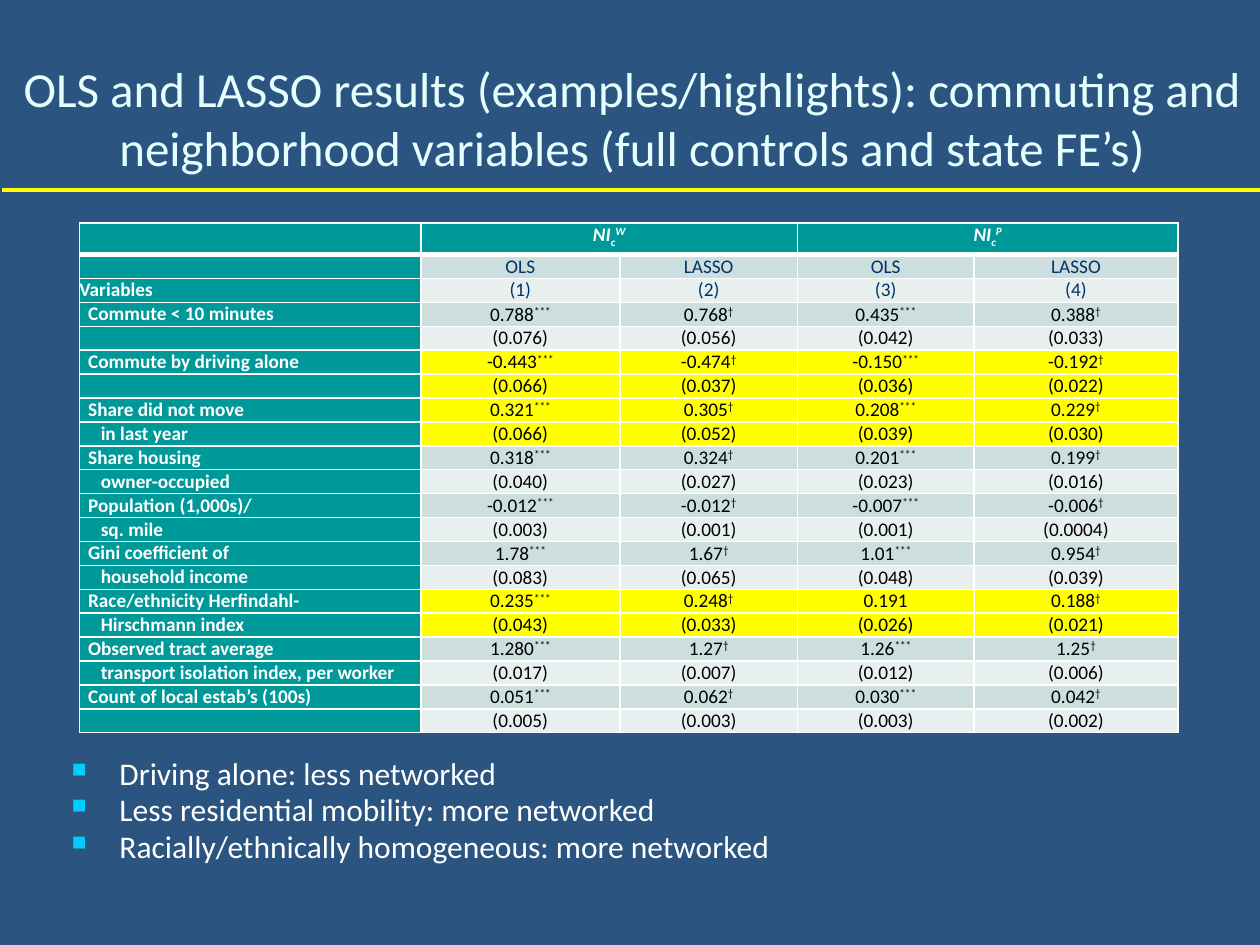
from lxml.etree import SubElement as Sub
from pptx import Presentation
from pptx.dml.color import RGBColor as RGB
from pptx.enum.shapes import MSO_CONNECTOR as Conn
from pptx.enum.text import MSO_ANCHOR as Anchor, PP_ALIGN as Align
from pptx.oxml.ns import qn
from pptx.util import Inches, Pt

NAVY = RGB(0x2B, 0x54, 0x81)
ICE = RGB(0xE5, 0xFF, 0xFF)
WHITE = RGB(0xFF, 0xFF, 0xFF)
BLACK = RGB(0, 0, 0)
INK = RGB(0, 0x33, 0x66)
TEAL = RGB(0, 0x99, 0x99)
YELLOW = RGB(0xFF, 0xFF, 0)
CYAN = RGB(0, 0xCC, 0xFF)
BANDS = RGB(0xE7, 0xEF, 0xEF), RGB(0xCC, 0xDE, 0xDE)

# Two label lines, then coefficients, their marks, standard errors
STARS = ("***", "†", "***", "†")
PAIRS = [
    ("Commute < 10 minutes", "", "0.788 0.768 0.435 0.388", STARS,
     "0.076 0.056 0.042 0.033"),
    ("Commute by driving alone", "", "-0.443 -0.474 -0.150 -0.192", STARS,
     "0.066 0.037 0.036 0.022"),
    ("Share did not move", "in last year", "0.321 0.305 0.208 0.229", STARS,
     "0.066 0.052 0.039 0.030"),
    ("Share housing", "owner-occupied", "0.318 0.324 0.201 0.199", STARS,
     "0.040 0.027 0.023 0.016"),
    ("Population (1,000s)/", "sq. mile", "-0.012 -0.012 -0.007 -0.006", STARS,
     "0.003 0.001 0.001 0.0004"),
    ("Gini coefficient of", "household income", "1.78 1.67 1.01 0.954", STARS,
     "0.083 0.065 0.048 0.039"),
    ("Race/ethnicity Herfindahl-", "Hirschmann index",
     "0.235 0.248 0.191 0.188", ("***", "†", "", "†"),
     "0.043 0.033 0.026 0.021"),
    ("Observed tract average", "transport isolation index, per worker",
     "1.280 1.27 1.26 1.25", STARS, "0.017 0.007 0.012 0.006"),
    ("Count of local estab’s (100s)", "", "0.051 0.062 0.030 0.042", STARS,
     "0.005 0.003 0.003 0.002"),
]
MARKED = {1, 2, 6}
POINTS = [
    "Driving alone: less networked",
    "Less residential mobility: more networked",
    "Racially/ethnically homogeneous: more networked",
]


def write(para, parts, color, size, **look):
    """Add (text, baseline percent) parts to para as runs of one look."""
    for text, base in parts:
        run = para.add_run()
        run.text = text
        run.font.color.rgb = color
        for key, val in {"name": "Calibri", "size": Pt(size), **look}.items():
            setattr(run.font, key, val)
        if base:
            run.font._element.set("baseline", str(base * 1000))


def put(row, col, parts, fill, color, left=0.0, anchor=Anchor.TOP, **look):
    """Border, fill and write one cell of the table."""
    cell = table.cell(row, col)
    props = cell._tc.get_or_add_tcPr()
    for side in "LRTB":
        thick = (row, side) in ((0, "B"), (1, "T"))
        line = Sub(props, qn("a:ln" + side), w=str(Pt(3 if thick else 1)))
        Sub(Sub(line, qn("a:solidFill")), qn("a:srgbClr"), val=str(WHITE))
    cell.fill.solid()
    cell.fill.fore_color.rgb = fill
    form = {"margin_left": Inches(left), "margin_right": Inches(min(left, 0.07)),
            "margin_top": 0, "margin_bottom": 0, "vertical_anchor": anchor}
    for key, val in form.items():
        setattr(cell, key, val)
    para = cell.text_frame.paragraphs[0]
    para.alignment = Align.CENTER if col else Align.LEFT
    write(para, parts, color, 11, **look)
    if not parts:
        Sub(para._p, qn("a:endParaRPr"), sz="1100")


deck = Presentation()
deck.slide_width, deck.slide_height = W, H = Inches(10), Inches(7.5)
slide = deck.slides.add_slide(deck.slide_layouts[5])
slide.background.fill.solid()
slide.background.fill.fore_color.rgb = NAVY

# Title and rule
title = slide.shapes.title
area = {"left": 0.008 * W, "top": 0.024 * H, "width": 0.987 * W, "height": 0.2 * H}
for key, val in area.items():
    setattr(title, key, int(val))
frame = title.text_frame
form = {"word_wrap": True, "vertical_anchor": Anchor.MIDDLE,
        "margin_left": Inches(0.08), "margin_right": Inches(0.08)}
for key, val in form.items():
    setattr(frame, key, val)
frame.paragraphs[0].alignment = Align.CENTER
write(frame.paragraphs[0],
      [("OLS and LASSO results (examples/highlights): commuting and "
        "neighborhood variables (full controls and state FE’s)", 0)], ICE, 28)

rule = slide.shapes.add_connector(
    Conn.STRAIGHT, Inches(0.02), Inches(1.51), W, Inches(1.51))
rule.line.color.rgb = YELLOW
rule.line.width = Pt(2)
Sub(rule._element.spPr, qn("a:effectLst"))

# Findings
box = slide.shapes.add_textbox(
    Inches(0.47), Inches(5.99), Inches(9.47), Inches(0.56))
box.text_frame.word_wrap = True
for i, text in enumerate(POINTS):
    para = box.text_frame.paragraphs[0] if i == 0 else box.text_frame.add_paragraph()
    para.line_spacing = 0.8
    para.space_before = Pt(3.6)
    write(para, [(text, 0)], WHITE, 18)
    props = para._p.get_or_add_pPr()
    props.set("marL", str(Inches(0.38)))
    props.set("indent", str(-Inches(0.38)))
    Sub(Sub(props, qn("a:buClr")), qn("a:srgbClr"), val=str(CYAN))
    Sub(props, qn("a:buSzPct"), val="65000")
    Sub(props, qn("a:buChar"), char="■")

# Results table
WIDTHS = 2.71, 1.58, 1.41, 1.4, 1.62
rows = 3 + 2 * len(PAIRS)
table = slide.shapes.add_table(
    rows, len(WIDTHS), Inches(0.63), Inches(1.77),
    Inches(sum(WIDTHS)), Inches(0.25 + 0.19 * (rows - 1))).table
table.first_row = table.horz_banding = False
for col, width in zip(table.columns, WIDTHS):
    col.width = Inches(width)
for i, row in enumerate(table.rows):
    row.height = Inches(0.19 if i else 0.25)

for col in (1, 3):
    table.cell(0, col).merge(table.cell(0, col + 1))
for col, mark in enumerate(("", "W", "", "P", "")):
    parts = [("NI", 0), ("c", -25), (mark, 30)] if mark else []
    put(0, col, parts, TEAL, WHITE, bold=True, italic=True)
put(1, 0, [], TEAL, WHITE)
put(2, 0, [("Variables", 0)], TEAL, WHITE, bold=True)
for col in range(1, 5):
    put(1, col, [("OLS" if col % 2 else "LASSO", 0)], BANDS[1], INK)
    put(2, col, [(f"({col})", 0)], BANDS[0], INK)

for i, (name, more, coefs, marks, errs) in enumerate(PAIRS):
    top = 3 + 2 * i
    for row, label, left in ((top, name, 0.07), (top + 1, more, 0.17)):
        put(row, 0, [(label, 0)] if label else [], TEAL, WHITE, left, bold=True)
    values = zip(coefs.split(), marks, errs.split())
    for col, (coef, mark, err) in enumerate(values, 1):
        lines = [(coef, 0)] + ([(mark, 30)] if mark else []), [(f"({err})", 0)]
        for row, parts in enumerate(lines, top):
            fill = YELLOW if i in MARKED else BANDS[row % 2]
            put(row, col, parts, fill, BLACK, 0.07, Anchor.BOTTOM)

deck.save("out.pptx")
